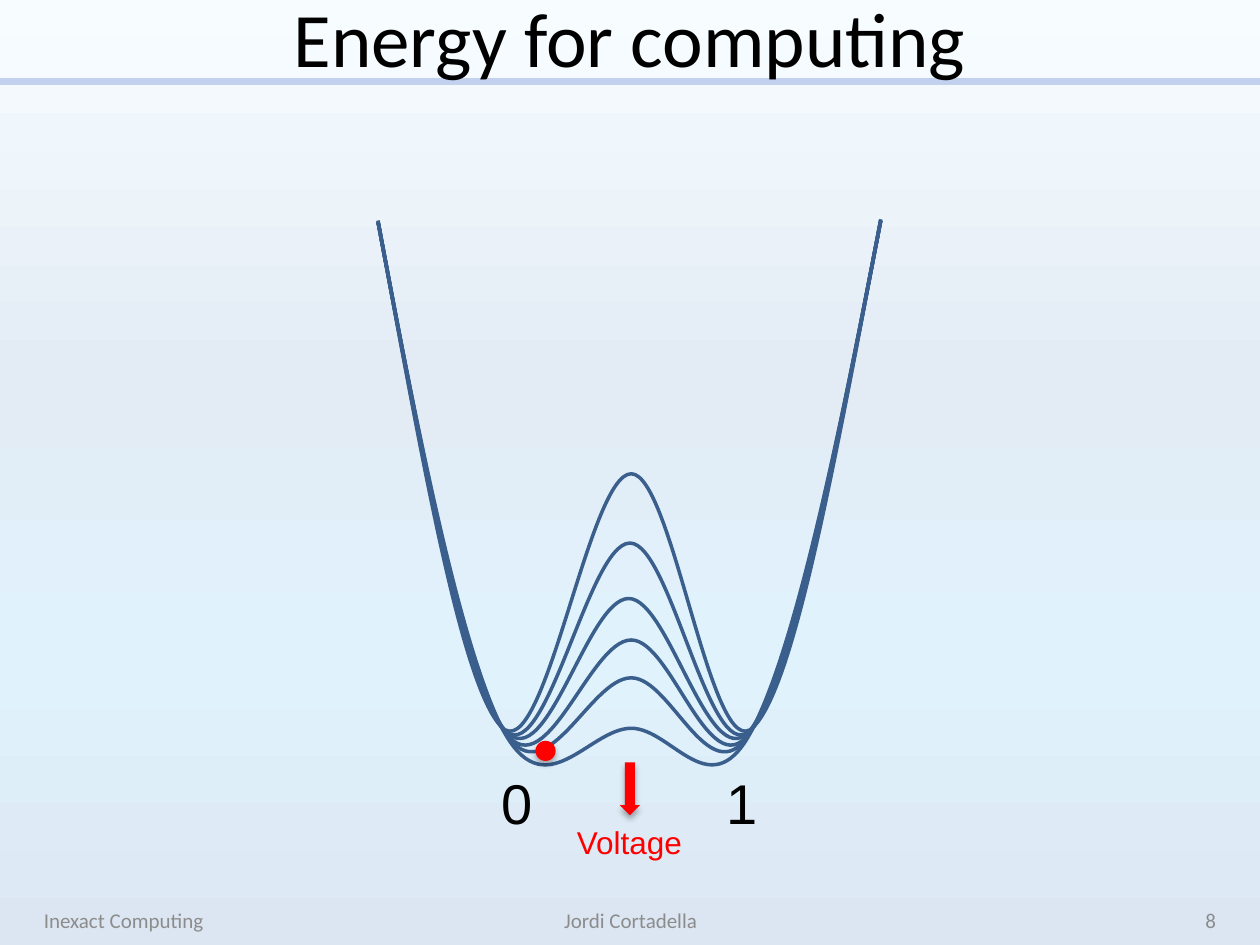
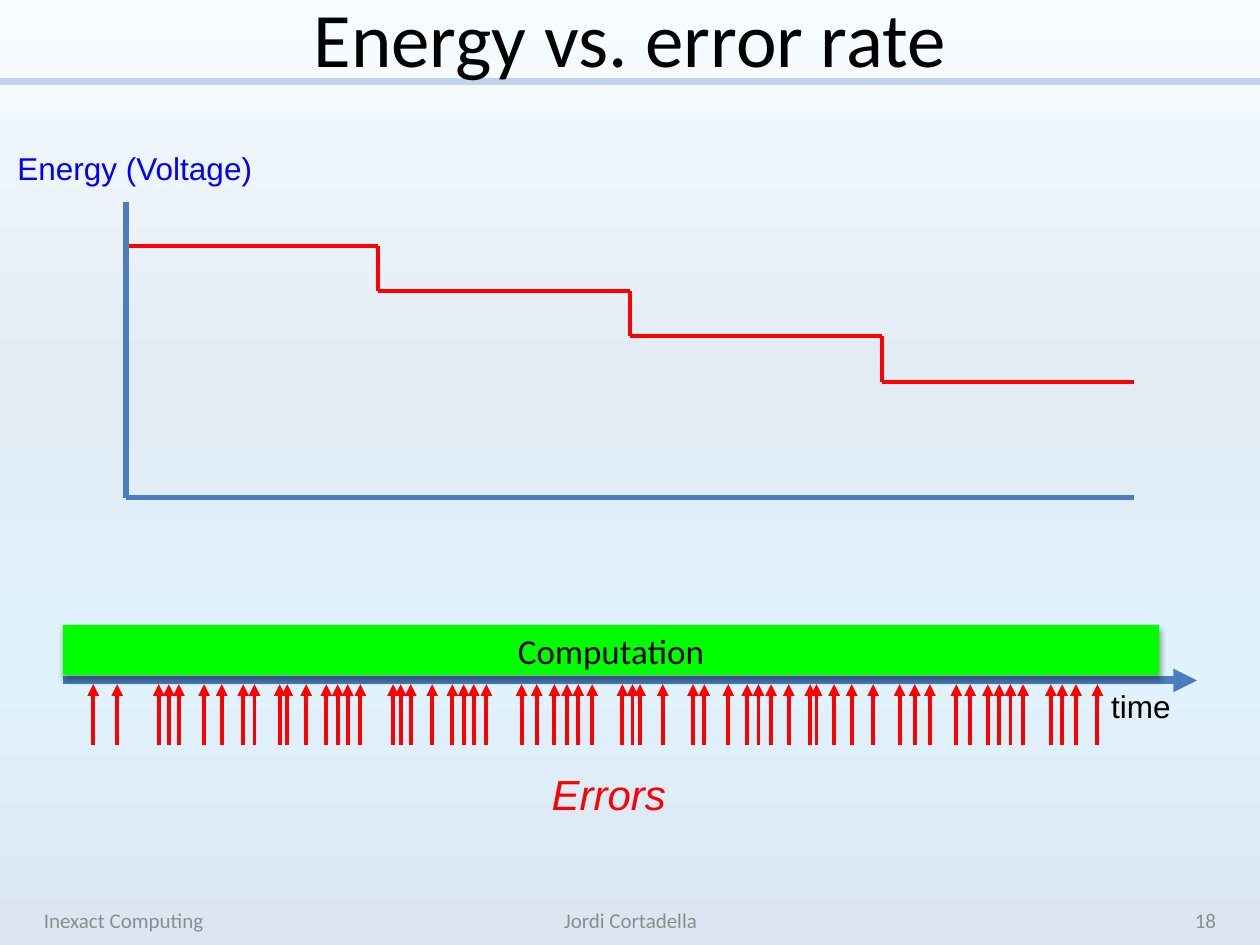
from copy import deepcopy

from lxml.etree import SubElement
from pptx import Presentation
from pptx.dml.color import RGBColor
from pptx.enum.shapes import MSO_CONNECTOR, MSO_SHAPE
from pptx.enum.text import MSO_ANCHOR, MSO_AUTO_SIZE, PP_ALIGN
from pptx.oxml.ns import qn
from pptx.util import Pt

PX = 9144  # EMU per px, 100 px to the inch
BLACK, GREY, RED, BLUE = "000000", "8C8C8C", "FF0000", "0000FF"
GREEN, RULE, AXIS, CURVE = "00FF00", "C2D1ED", "4B7EBC", "3A5F8C"
BACKGROUND_STOPS = [(0, "F7FDFF"), (0.4, "E3EBF5"), (0.7, "E0F3FC"), (1, "DCE6F2")]


def write(shape, text, size, font, color, align=PP_ALIGN.LEFT):
    """Add one formatted run to the first paragraph and return the run."""
    paragraph = shape.text_frame.paragraphs[0]
    paragraph.alignment = align
    run = paragraph.add_run()
    run.text = text
    run.font.size = Pt(size)
    run.font.name = font
    run.font.color.rgb = RGBColor.from_string(color)
    return run


def add_line(slide, start, end, color, width, arrow=False):
    ends = [value * PX for value in (*start, *end)]
    line = slide.shapes.add_connector(MSO_CONNECTOR.STRAIGHT, *ends)
    line.line.color.rgb = RGBColor.from_string(color)
    line.line.width = Pt(width)
    properties = line._element.spPr
    if arrow:
        SubElement(properties.find(qn("a:ln")), qn("a:tailEnd"), type="triangle")
    SubElement(properties, qn("a:effectLst"))
    return line


presentation = Presentation()
presentation.slide_width = 1000 * PX
presentation.slide_height = 750 * PX
master = presentation.slide_master
title_only = presentation.slide_layouts[5]

# Background shared through the master
background = master.background.fill
background.gradient()
background.gradient_angle = 270
first_stop = background.gradient_stops[0]._gs
for _ in range(2):
    first_stop.addnext(deepcopy(first_stop))
for stop, (position, color) in zip(background.gradient_stops, BACKGROUND_STOPS):
    stop.position = position
    stop.color.rgb = RGBColor.from_string(color)

# Titles and footers
slides = []
for title_text, number in [("Energy for computing", "8"), ("Energy vs. error rate", "18")]:
    slide = presentation.slides.add_slide(title_only)
    slides.append(slide)
    title = slide.shapes.title
    title.left, title.top, title.width, title.height = 50 * PX, 0, 900 * PX, 58 * PX
    title.text_frame.auto_size = MSO_AUTO_SIZE.NONE
    title.text_frame.vertical_anchor = MSO_ANCHOR.MIDDLE
    write(title, title_text, 44, "Calibri", BLACK, PP_ALIGN.CENTER)
    for left, width, text, align in [
        (25, 233, "Inexact Computing", PP_ALIGN.LEFT),
        (342, 317, "Jordi Cortadella", PP_ALIGN.CENTER),
        (742, 233, number, PP_ALIGN.RIGHT),
    ]:
        footer = slide.shapes.add_textbox(left * PX, 710 * PX, width * PX, 40 * PX)
        footer.text_frame.word_wrap = True
        footer.text_frame.vertical_anchor = MSO_ANCHOR.MIDDLE
        write(footer, text, 12, "Calibri", GREY, align)
computing_slide, error_slide = slides

# The rule under the title moves to the master
title_rule = add_line(computing_slide, (0, 65), (1000, 65), RULE, 4)._element
title_rule.nvCxnSpPr.cNvPr.id = 99
master.shapes._spTree.append(title_rule)

# Double-well energy curves, each of four Bézier segments
CURVE_LEFT, CURVE_RIGHT = 300, 699
for top, bottom, peak_x, peak_y, bend in [
    (174, 586, 499, 475, 50),
    (175, 580, 501, 376, 34),
    (175, 583, 500, 431, 43),
    (175, 591, 501, 508, 56),
    (175, 596, 501, 538, 61),
    (175, 607, 501, 578, 67),
]:
    well_y = top + 402
    xs = [CURVE_LEFT, 333, 365, 398, 432, peak_x - 34, peak_x, peak_x + 33,
          565, 598, 632, 665, CURVE_RIGHT]
    half = [top + 176, well_y - bend, well_y, well_y + bend, peak_y]
    ys = [top + 1, *half, peak_y, *half[::-1], top]

    # The diagonal fixes the frame, then the segments take its place
    builder = computing_slide.shapes.build_freeform(CURVE_LEFT, top, scale=PX)
    builder.add_line_segments([(CURVE_RIGHT, bottom)], close=False)
    curve = builder.convert_to_shape()
    outline = curve._element.spPr.find(".//" + qn("a:path"))
    for child in list(outline):
        outline.remove(child)
    for index, (x, y) in enumerate(zip(xs, ys)):
        if index == 0:
            command = SubElement(outline, qn("a:moveTo"))
        elif index % 3 == 1:
            command = SubElement(outline, qn("a:cubicBezTo"))
        SubElement(command, qn("a:pt"), x=str(x - CURVE_LEFT), y=str(y - top))
    curve.shadow.inherit = False
    curve.fill.background()
    curve.line.color.rgb = RGBColor.from_string(CURVE)
    curve.line.width = Pt(2)

# Time axis, below the computation bar
add_line(error_slide, (50, 540), (950, 540), AXIS, 4.5, arrow=True)

# Filled shapes with a soft shadow
for slide, preset, box, color, text in [
    (computing_slide, MSO_SHAPE.DOWN_ARROW, (492, 605, 16, 42), RED, ""),
    (computing_slide, MSO_SHAPE.OVAL, (425, 588, 16, 16), RED, ""),
    (error_slide, MSO_SHAPE.RECTANGLE, (50, 496, 870, 40), GREEN, "Computation"),
]:
    shape = slide.shapes.add_shape(preset, *[value * PX for value in box])
    shape.fill.solid()
    shape.fill.fore_color.rgb = RGBColor.from_string(color)
    shape.line.fill.background()
    shape.shadow.inherit = False
    shadow = SubElement(
        shape._element.spPr.find(qn("a:effectLst")), qn("a:outerShdw"),
        blurRad=str(Pt(3.5)), dist=str(Pt(2.2)), dir="5400000", rotWithShape="0")
    shadow_color = SubElement(shadow, qn("a:srgbClr"), val=BLACK)
    SubElement(shadow_color, qn("a:alpha"), val="32000")
    if text:
        shape.text_frame.vertical_anchor = MSO_ANCHOR.MIDDLE
        write(shape, text, 20, "Calibri", BLACK, PP_ALIGN.CENTER)

# Voltage staircase and its axes
add_line(error_slide, (900, 395), (100, 395), AXIS, 3)
for step in range(4):
    x, y = 100 + 200 * step, 195 + 36 * step
    add_line(error_slide, (x, y), (x + 200, y), RED, 2.25)
    if step:
        add_line(error_slide, (x, y - 36), (x, y), RED, 2.25)
add_line(error_slide, (100, 160), (100, 395), AXIS, 3)

# Errors along the time axis
ERROR_XS = [
    74, 93, 126, 134, 142, 162, 176, 193, 202, 222, 228, 243, 259, 268, 276, 286,
    312, 318, 326, 343, 359, 368, 376, 386, 414, 426, 440, 450, 459, 470, 494, 502,
    508, 526, 550, 559, 578, 593, 602, 612, 626, 643, 648, 662, 676, 693, 714, 726,
    738, 759, 770, 784, 793, 802, 812, 834, 843, 854, 871,
]
for x in ERROR_XS:
    add_line(error_slide, (x, 591), (x, 543), RED, 2.25, arrow=True)

# Labels
for slide, box, text, size, color in [
    (computing_slide, (388, 605, 45, 64), "0", 32, BLACK),
    (computing_slide, (567, 605, 45, 64), "1", 32, BLACK),
    (computing_slide, (448, 648, 104, 40), "Voltage", 18, RED),
    (error_slide, (872, 540, 68, 40), "time", 18, BLACK),
    (error_slide, (4, 113, 208, 40), "Energy (Voltage)", 18, BLUE),
    (error_slide, (428, 605, 112, 50), "Errors", 24, RED),
]:
    label = slide.shapes.add_textbox(*[value * PX for value in box])
    label.text_frame.word_wrap = False
    label.text_frame.auto_size = MSO_AUTO_SIZE.SHAPE_TO_FIT_TEXT
    run = write(label, text, size, "Arial", color)
    if text == "Errors":
        run.font.italic = True

presentation.save("out.pptx")
